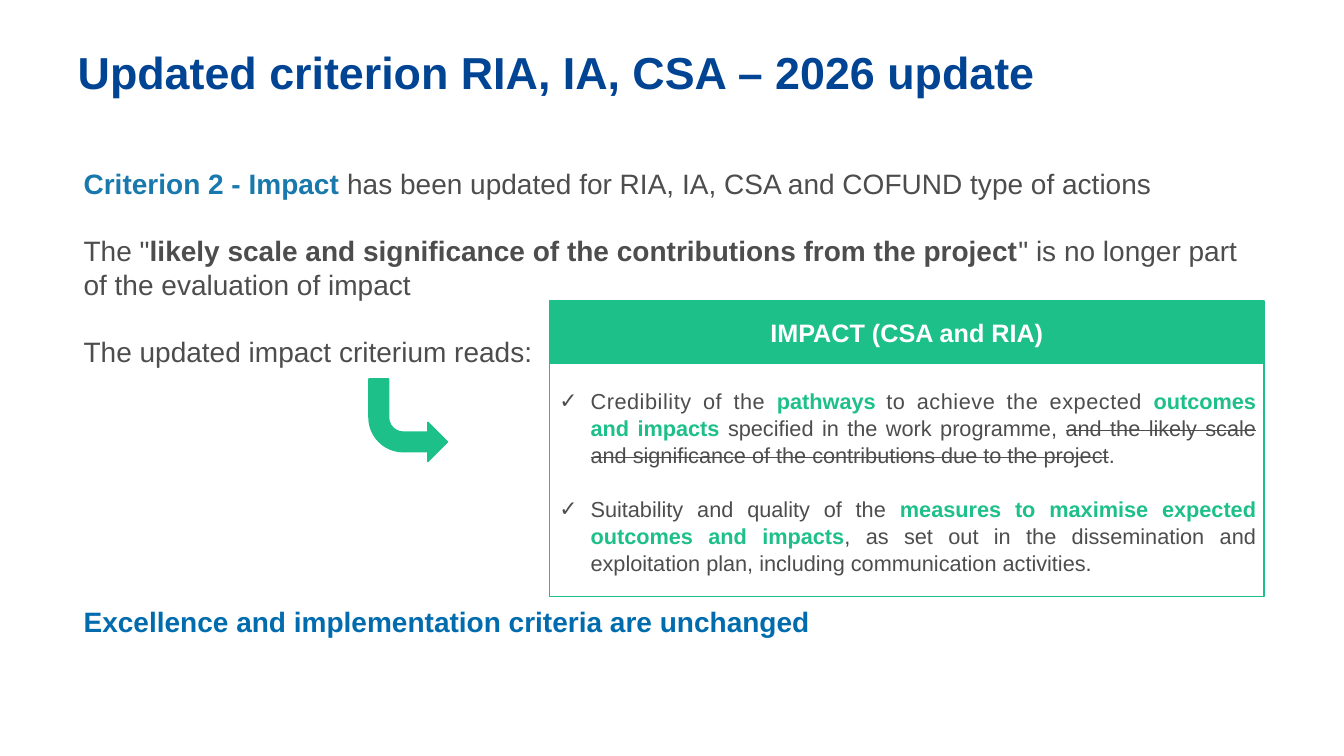
from lxml.etree import SubElement
from pptx import Presentation
from pptx.dml.color import RGBColor
from pptx.enum.shapes import MSO_SHAPE
from pptx.enum.text import MSO_ANCHOR, PP_ALIGN
from pptx.oxml.ns import qn
from pptx.util import Inches, Pt

GREEN, GREY, NAVY, TEAL, BLUE = "1EC089", "4D4D4D", "004493", "1A79AC", "006CAE"
BOLD = {"bold": True}
KEY = {"bold": True, "color": GREEN}
WIDE = {"spc": 40}
STRUCK = {"strike": "sngStrike"}


def paint(code):
    return RGBColor.from_string(code)


class Deck:
    """Holds the style and the current slide; lengths are percent of the slide."""

    def __init__(self):
        self.prs = Presentation()
        self.prs.slide_width, self.prs.slide_height = Inches(13.33), Inches(7.5)
        self.slide = self.prs.slides.add_slide(self.prs.slide_layouts[6])
        self.base = {"name": "Arial", "size": Pt(20), "bold": False, "color": GREY}

    def spot(self, left, top, width, height):
        wide, high = self.prs.slide_width, self.prs.slide_height
        return [int(part * side / 100) for part, side in
                zip((left, top, width, height), (wide, high, wide, high))]

    def style(self, run, look):
        for name, value in look.items():
            if name == "color":
                run.font.color.rgb = paint(value)
            elif name in ("spc", "strike"):
                run.font._element.set(name, str(value))
            else:
                setattr(run.font, name, value)

    def label(self, shape, lines, look, form=None, tick=False):
        frame = shape.text_frame
        frame.word_wrap = True
        for side in ("left", "top", "right", "bottom"):
            setattr(frame, "margin_" + side, 0)
        for rank, runs in enumerate(lines):
            para = frame.paragraphs[0] if rank == 0 else frame.add_paragraph()
            if tick:
                self.tick(para)
            for name, value in (form or {}).items():
                if rank or name != "space_before":
                    setattr(para, name, value)
            for words, extra in runs:
                run = para.add_run()
                run.text = words
                self.style(run, {**self.base, **look, **extra})

    def tick(self, para):
        props = para._p.get_or_add_pPr()
        props.set("marL", str(Inches(0.31)))
        props.set("indent", str(-Inches(0.31)))
        SubElement(props, qn("a:buFont"), typeface="Arial")
        SubElement(props, qn("a:buChar"), char="✓")

    def text(self, place, lines, look=None, form=None, tick=False):
        box = self.slide.shapes.add_textbox(*self.spot(*place))
        self.label(box, lines, look or {}, form, tick)

    def block(self, kind, place, fill=None):
        shape = self.slide.shapes.add_shape(kind, *self.spot(*place))
        shape.shadow.inherit = False
        shape.line.color.rgb = paint(GREEN)
        shape.line.width = Pt(1)
        if fill:
            shape.fill.solid()
            shape.fill.fore_color.rgb = paint(fill)
        else:
            shape.fill.background()
        return shape


def main():
    deck = Deck()
    deck.text((5.78, 5.87, 84.5, 7), [[("Updated criterion RIA, IA, CSA – 2026 update", {})]],
              {"size": Pt(32), "bold": True, "color": NAVY})
    deck.text((6.22, 22, 87, 18), [
        [("Criterion 2 - Impact ", {"bold": True, "color": TEAL}),
         ("has been updated for RIA, IA, CSA and COFUND type of actions", {})],
        [('The "', {}),
         ("likely scale and significance of the contributions from the project", BOLD),
         ('" is no longer part of the evaluation of impact', {})],
    ], form={"space_before": Pt(24)})
    deck.text((6.22, 44.2, 34, 4.8), [[("The updated impact criterium reads:", {})]])

    head = deck.block(MSO_SHAPE.RECTANGLE, (40.9, 39.8, 53.15, 8.3), GREEN)
    deck.label(head, [[("IMPACT (CSA and RIA)", {})]],
               {"size": Pt(18), "bold": True, "color": "FFFFFF"},
               {"alignment": PP_ALIGN.CENTER})
    head.text_frame.vertical_anchor = MSO_ANCHOR.MIDDLE
    deck.block(MSO_SHAPE.RECTANGLE, (40.9, 48.1, 53.15, 30.8))

    deck.text((41.62, 51.2, 51.83, 27), [
        [("Credibility of the ", WIDE), ("pathways ", KEY),
         ("to achieve the expected ", WIDE), ("outcomes and impacts ", KEY),
         ("specified in the work programme, ", {}),
         ("and the likely scale and significance of the contributions due to the project", STRUCK),
         (".", {})],
        [("Suitability and quality of the ", {}),
         ("measures to maximise expected outcomes and impacts", KEY),
         (", as set out in the dissemination and exploitation plan, "
          "including communication activities.", {})],
    ], {"size": Pt(15.5)}, {"alignment": PP_ALIGN.JUSTIFY, "line_spacing": 1.03,
                            "space_before": Pt(20)}, tick=True)
    deck.text((6.22, 80, 60, 4.8),
              [[("Excellence and implementation criteria are unchanged", {})]],
              {"bold": True, "color": BLUE})

    arrow = deck.block(MSO_SHAPE.BENT_ARROW, (27.45, 50.13, 5.85, 10.93), GREEN)
    arrow._element.spPr.find(qn("a:xfrm")).set("flipV", "1")
    deck.prs.save("out.pptx")


if __name__ == "__main__":
    main()
